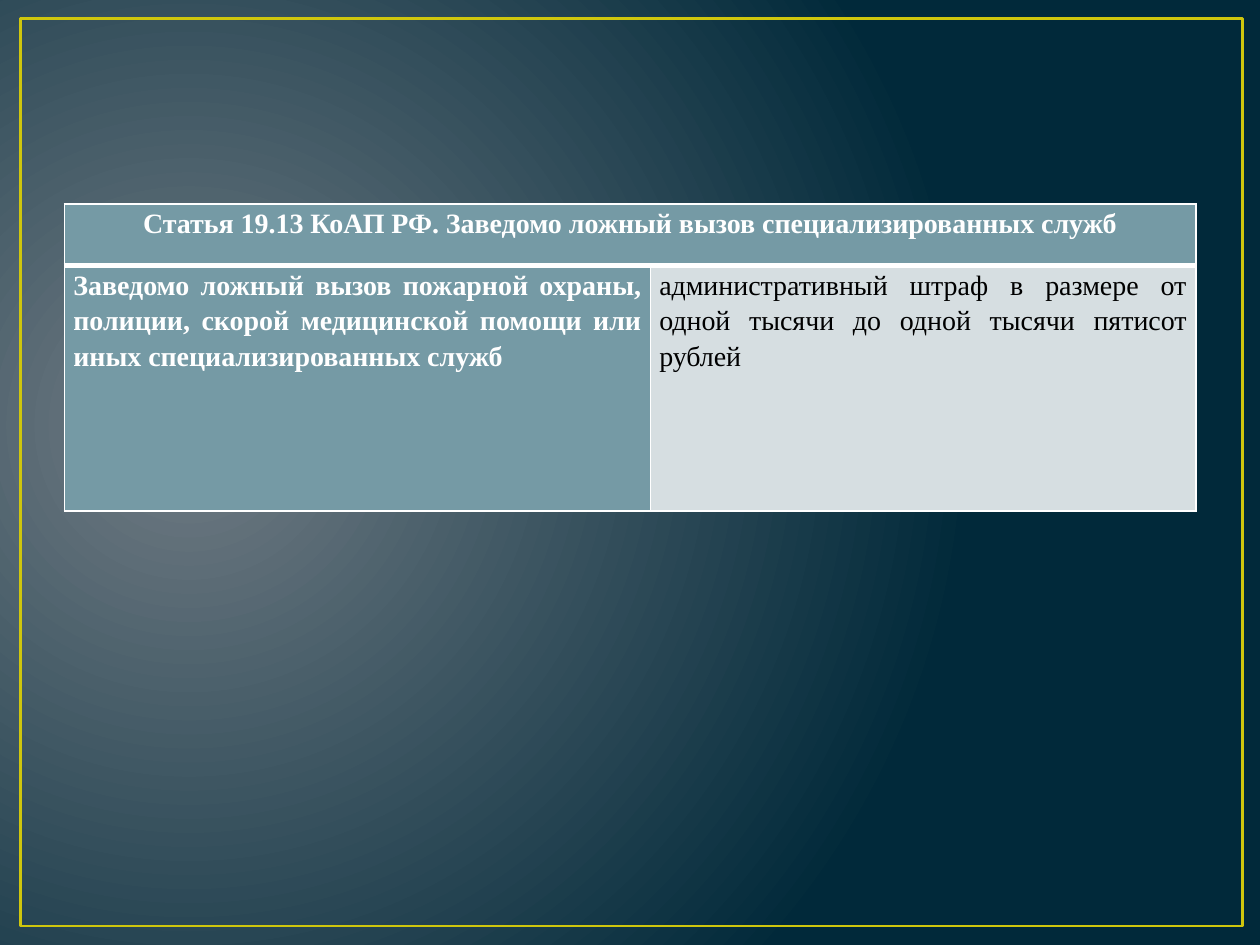
from dataclasses import dataclass

from lxml import etree
from pptx import Presentation
from pptx.dml.color import RGBColor
from pptx.enum import shapes, text
from pptx.oxml import ns, parse_xml
from pptx.util import Cm, Pt

FONT = "Times New Roman"
WHITE = RGBColor(0xFF, 0xFF, 0xFF)
BLACK = RGBColor(0x00, 0x00, 0x00)
GOLD = RGBColor(0xCF, 0xC6, 0x0D)
TEAL = RGBColor(0x75, 0x9A, 0xA5)
PALE = RGBColor(0xD6, 0xDE, 0xE1)
GLOW = RGBColor(0x71, 0x7C, 0x84)
NAVY = RGBColor(0x01, 0x29, 0x3A)


@dataclass(frozen=True)
class TableCell:
    row: int
    column: int
    fill: RGBColor
    content: str = ""
    color: RGBColor = WHITE
    bold: bool = True
    alignment: text.PP_ALIGN = text.PP_ALIGN.JUSTIFY


CELLS = (
    TableCell(0, 0, TEAL,
              "Статья 19.13 КоАП РФ. Заведомо ложный вызов специализированных служб",
              alignment=text.PP_ALIGN.CENTER),
    TableCell(0, 1, TEAL),
    TableCell(1, 0, TEAL,
              "Заведомо ложный вызов пожарной охраны, полиции, скорой "
              "медицинской помощи или иных специализированных служб"),
    TableCell(1, 1, PALE,
              "административный штраф в размере от одной тысячи "
              "до одной тысячи пятисот рублей", color=BLACK, bold=False),
)


def set_background(slide) -> None:
    background = parse_xml(
        f'<p:bg {ns.nsdecls("p", "a")}><p:bgPr><a:gradFill rotWithShape="1"><a:gsLst>'
        f'<a:gs pos="0"><a:srgbClr val="{GLOW}"/></a:gs>'
        f'<a:gs pos="100000"><a:srgbClr val="{NAVY}"/></a:gs></a:gsLst>'
        '<a:path path="circle"><a:fillToRect l="15000" t="50000" r="85000" b="60000"/>'
        '</a:path></a:gradFill><a:effectLst/></p:bgPr></p:bg>'
    )
    slide.element.cSld.insert(0, background)


def add_frame(slide) -> None:
    frame = slide.shapes.add_shape(
        shapes.MSO_SHAPE.RECTANGLE, Cm(0.41), Cm(0.38), Cm(24.64), Cm(18.29))
    frame.shadow.inherit = False
    frame.fill.background()
    frame.line.color.rgb = GOLD
    frame.line.width = Pt(1.5)


def write_text(text_frame, content: str, *, size: float, color: RGBColor, bold: bool,
               alignment: text.PP_ALIGN) -> None:
    paragraph = text_frame.paragraphs[0]
    paragraph.alignment = alignment
    paragraph.line_spacing = 1.15
    run = paragraph.add_run()
    run.text = content
    run.font.name = FONT
    run.font.size = Pt(size)
    run.font.bold = bold
    run.font.color.rgb = color


def set_borders(cell, widths: dict[str, float]) -> None:
    properties = cell._tc.get_or_add_tcPr()
    for position, (side, width) in enumerate(widths.items()):
        border = etree.Element(ns.qn(f"a:{side}"), w=str(Pt(width)))
        fill = etree.SubElement(border, ns.qn("a:solidFill"))
        etree.SubElement(fill, ns.qn("a:srgbClr"), val=str(WHITE))
        properties.insert(position, border)


def draw_cell(table, item: TableCell) -> None:
    cell = table.cell(item.row, item.column)
    cell.margin_left = cell.margin_right = Cm(0.18)
    cell.margin_top = cell.margin_bottom = 0
    cell.fill.solid()
    cell.fill.fore_color.rgb = item.fill
    header = item.row == 0
    set_borders(cell, {"lnL": 1, "lnR": 1, "lnT": 1 if header else 3,
                       "lnB": 3 if header else 1})
    if item.content:
        write_text(cell.text_frame, item.content, size=16, color=item.color,
                   bold=item.bold, alignment=item.alignment)


def add_penalty_table(slide) -> None:
    widths, heights = (11.81, 11), (1.24, 4.95)
    table = slide.shapes.add_table(
        len(heights), len(widths), Cm(1.3), Cm(4.11),
        Cm(sum(widths)), Cm(sum(heights))).table
    for column, width in zip(table.columns, widths):
        column.width = Cm(width)
    for row, height in zip(table.rows, heights):
        row.height = Cm(height)
    table.cell(0, 0).merge(table.cell(0, 1))
    for item in CELLS:
        draw_cell(table, item)


def main() -> None:
    presentation = Presentation()
    presentation.slide_width = Cm(25.4)
    presentation.slide_height = Cm(19.05)
    slide = presentation.slides.add_slide(presentation.slide_layouts[6])
    set_background(slide)
    add_frame(slide)
    add_penalty_table(slide)
    presentation.save("out.pptx")


if __name__ == "__main__":
    main()
